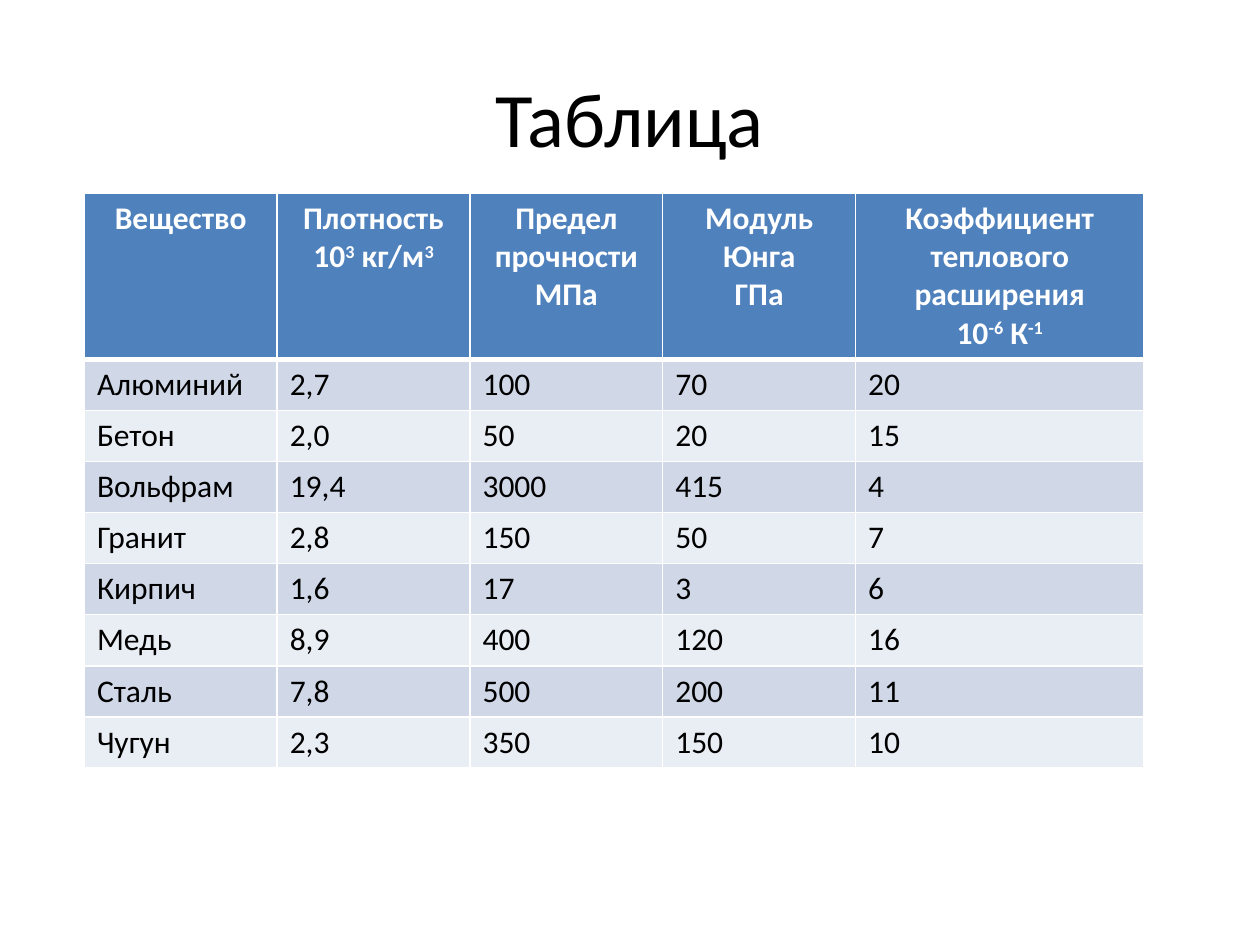
from lxml.etree import SubElement
from pptx import Presentation
from pptx.dml.color import RGBColor
from pptx.enum.text import MSO_ANCHOR, PP_ALIGN
from pptx.oxml.ns import qn
from pptx.util import Inches, Pt

# Content: in each header, every second piece is a superscript
TITLE = "Таблица"
HEADERS = [
    ["Вещество"],
    ["Плотность\n10", "3", " кг/м", "3"],
    ["Предел прочности\nМПа"],
    ["Модуль Юнга\nГПа"],
    ["Коэффициент теплового расширения\n10", "-6", " К", "-1"],
]
MATERIALS = [
    ("Алюминий", "2,7", "100", "70", "20"),
    ("Бетон", "2,0", "50", "20", "15"),
    ("Вольфрам", "19,4", "3000", "415", "4"),
    ("Гранит", "2,8", "150", "50", "7"),
    ("Кирпич", "1,6", "17", "3", "6"),
    ("Медь", "8,9", "400", "120", "16"),
    ("Сталь", "7,8", "500", "200", "11"),
    ("Чугун", "2,3", "350", "150", "10"),
]

# Style and layout
FONT = "Calibri"
COLORS = {"text": "000000", "header": "4F81BD", "header_text": "FFFFFF",
          "odd": "D0D8E8", "even": "E9EDF4", "border": "FFFFFF"}
LEFT, TOP, HEIGHT = 0.67, 1.53, 4.54
COLUMN_WIDTHS = [1.53] * 4 + [2.29]
HEADER_HEIGHT = 1.3
ROW_HEIGHT = (HEIGHT - HEADER_HEIGHT) / len(MATERIALS)


def format_runs(paragraph, size, color, bold=False):
    for run in paragraph.runs:
        run.font.name = FONT
        run.font.size = Pt(size)
        run.font.bold = bold
        run.font.color.rgb = RGBColor.from_string(COLORS[color])


def write_header(paragraph, pieces):
    paragraph.alignment = PP_ALIGN.CENTER
    for index, piece in enumerate(pieces):
        for line_number, line in enumerate(piece.split("\n")):
            if line_number:
                paragraph.add_line_break()
            run = paragraph.add_run()
            run.text = line
            if index % 2:
                run._r.get_or_add_rPr().set("baseline", "30000")


def style_cell(cell, fill, bottom_width=1, top_width=1):
    properties = cell._tc.get_or_add_tcPr()
    widths = {"a:lnL": 1, "a:lnR": 1, "a:lnT": top_width, "a:lnB": bottom_width}
    for tag, width in widths.items():
        line = SubElement(properties, qn(tag), w=str(Pt(width)))
        solid = SubElement(line, qn("a:solidFill"))
        SubElement(solid, qn("a:srgbClr"), val=COLORS["border"])
    cell.fill.solid()
    cell.fill.fore_color.rgb = RGBColor.from_string(COLORS[fill])


presentation = Presentation()
presentation.slide_width, presentation.slide_height = Inches(10), Inches(7.5)
slide = presentation.slides.add_slide(presentation.slide_layouts[5])

# Title
title = slide.shapes.title
title.left, title.top = Inches(0.5), Inches(0.3)
title.width, title.height = Inches(9), Inches(1.25)
title.text_frame.text = TITLE
title.text_frame.vertical_anchor = MSO_ANCHOR.MIDDLE
title.text_frame.paragraphs[0].alignment = PP_ALIGN.CENTER
format_runs(title.text_frame.paragraphs[0], 44, "text")

# Table grid
table = slide.shapes.add_table(
    len(MATERIALS) + 1, len(HEADERS), Inches(LEFT), Inches(TOP),
    Inches(sum(COLUMN_WIDTHS)), Inches(HEIGHT)).table
for column, width in zip(table.columns, COLUMN_WIDTHS):
    column.width = Inches(width)
for row in table.rows:
    row.height = Inches(ROW_HEIGHT)
table.rows[0].height = Inches(HEADER_HEIGHT)

# Header row
for column_index, pieces in enumerate(HEADERS):
    cell = table.cell(0, column_index)
    paragraph = cell.text_frame.paragraphs[0]
    write_header(paragraph, pieces)
    format_runs(paragraph, 18, "header_text", bold=True)
    style_cell(cell, "header", bottom_width=3)

# Material rows
for row_index, values in enumerate(MATERIALS, start=1):
    for column_index, value in enumerate(values):
        cell = table.cell(row_index, column_index)
        cell.text_frame.text = value
        format_runs(cell.text_frame.paragraphs[0], 18, "text")
        style_cell(cell, "odd" if row_index % 2 else "even",
                   top_width=3 if row_index == 1 else 1)

presentation.save("out.pptx")
